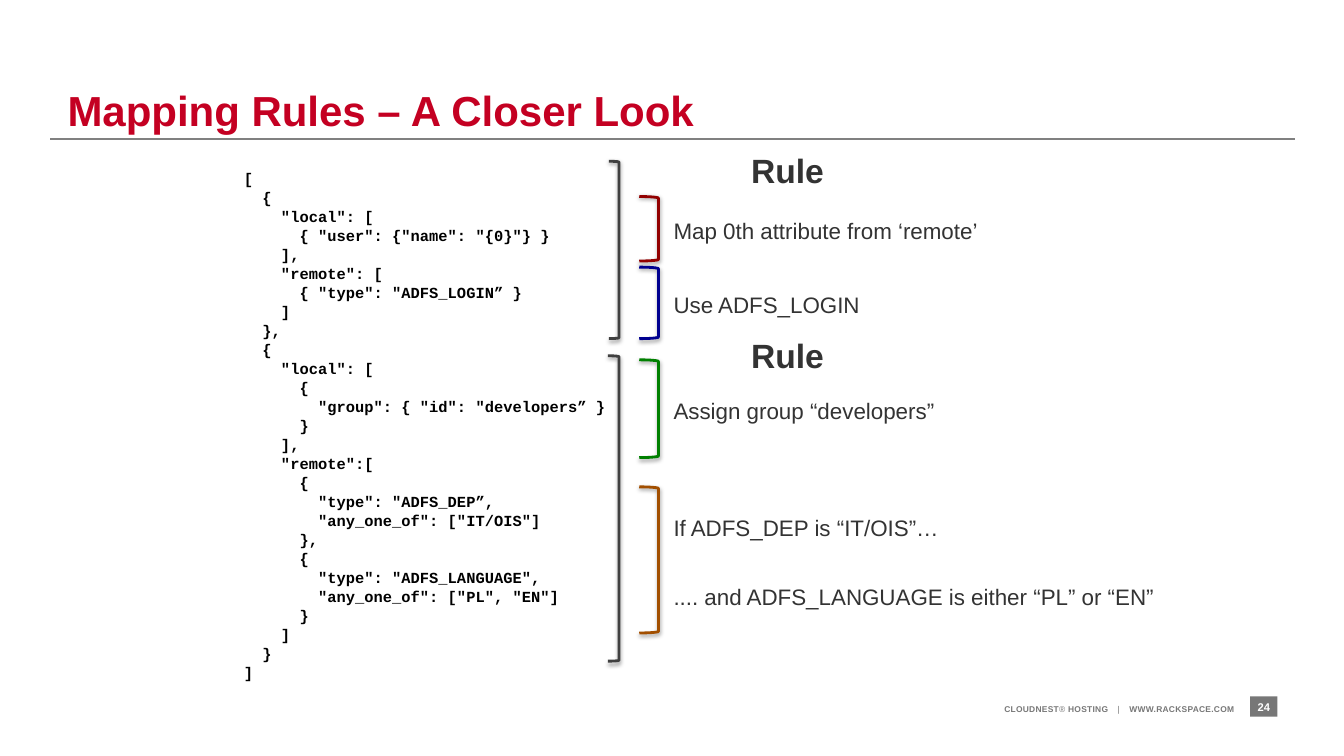
import pptx
import pptx.util
import pptx.dml.color
import pptx.enum.shapes
import pptx.enum.text
import pptx.oxml
import pptx.oxml.ns

Inches = pptx.util.Inches
Pt = pptx.util.Pt
RGBColor = pptx.dml.color.RGBColor
Anchor = pptx.enum.text.MSO_ANCHOR
Align = pptx.enum.text.PP_ALIGN
Preset = pptx.enum.shapes.MSO_SHAPE

CRIMSON = RGBColor(0xC4, 0x00, 0x22)
INK = RGBColor(0x33, 0x33, 0x33)
BLACK = RGBColor(0x00, 0x00, 0x00)
WHITE = RGBColor(0xFF, 0xFF, 0xFF)
FOOTER_GRAY = RGBColor(0x77, 0x77, 0x77)
RULE_GRAY = RGBColor(0x80, 0x80, 0x80)
CHARCOAL = RGBColor(0x40, 0x40, 0x40)
RED = RGBColor(0x92, 0x00, 0x00)
BLUE = RGBColor(0x00, 0x00, 0x90)
GREEN = RGBColor(0x00, 0x80, 0x00)
BROWN = RGBColor(0xA2, 0x4F, 0x00)

TITLE = "Mapping Rules – A Closer Look"
PAGE_NUMBER = "24"
FOOTER = [
    ("CLOUDNEST", True, 0.2),
    ("®", False, 0.2),
    (" HOSTING", True, 0.2),
    (" ", False, 5),
    ("|", False, 0.2),
    (" ", False, 5),
    ("WWW.RACKSPACE.COM", True, 0.2),
]
CODE = """[
  {
    "local": [
      { "user": {"name": "{0}"} }
    ],
    "remote": [
      { "type": "ADFS_LOGIN” }
    ]
  },
  {
    "local": [
      {
        "group": { "id": "developers” }
      }
    ],
    "remote":[
      {
        "type": "ADFS_DEP”,
        "any_one_of": ["IT/OIS"]
      },
      {
        "type": "ADFS_LANGUAGE",
        "any_one_of": ["PL", "EN"]
      }
    ]
  }
]""".split("\n")

RULE_TOPS = [1.49, 3.32]
NOTES = [
    (2.15, 0.27, ["Map 0th attribute from ‘remote’"]),
    (2.89, 0.27, ["Use ADFS_LOGIN"]),
    (3.94, 0.27, ["Assign group “developers”"]),
    (5.1, 0.96, ["If ADFS_DEP is “IT/OIS”…",
                 ".... and ADFS_LANGUAGE is either “PL” or “EN”"]),
]
BRACKETS = [
    (6.04, 1.6, 0.1, 1.76, CHARCOAL),
    (6.03, 3.53, 0.11, 3.03, CHARCOAL),
    (6.34, 1.95, 0.19, 0.64, RED),
    (6.34, 2.65, 0.19, 0.71, BLUE),
    (6.34, 3.57, 0.19, 0.97, GREEN),
    (6.34, 4.83, 0.19, 1.45, BROWN),
]
SHADOW = (
    '<a:effectLst xmlns:a="http://schemas.openxmlformats.org/drawingml/2006/main">'
    '<a:outerShdw blurRad="39370" dist="20320" dir="5400000" rotWithShape="0">'
    '<a:srgbClr val="000000"><a:alpha val="38000"/></a:srgbClr>'
    '</a:outerShdw></a:effectLst>'
)


def style(paragraph, size, color, bold=False, font="Arial"):
    paragraph.font.size = Pt(size)
    paragraph.font.name = font
    paragraph.font.bold = bold
    paragraph.font.color.rgb = color


def prepare(frame, anchor, inset=0):
    frame.word_wrap = True
    frame.vertical_anchor = anchor
    frame.margin_left = frame.margin_right = Inches(inset)
    frame.margin_top = frame.margin_bottom = Inches(inset)


def add_text(slide, box, lines, size, color, bold=False, font="Arial",
             anchor=Anchor.TOP, inset=0, line_spacing=None, before=0, after=0):
    frame = slide.shapes.add_textbox(*map(Inches, box)).text_frame
    prepare(frame, anchor, inset)
    for index, line in enumerate(lines):
        paragraph = frame.add_paragraph() if index else frame.paragraphs[0]
        paragraph.add_run().text = line
        style(paragraph, size, color, bold, font)
        paragraph.line_spacing = line_spacing
        paragraph.space_before = Pt(before if index else 0)
        paragraph.space_after = Pt(after)
    return frame


def add_bracket(slide, left, top, width, height, color):
    bracket = slide.shapes.add_shape(
        Preset.RIGHT_BRACKET, *map(Inches, (left, top, width, height)))
    bracket.fill.background()
    bracket.line.color.rgb = color
    bracket.line.width = Pt(2)
    bracket._element.spPr.append(pptx.oxml.parse_xml(SHADOW))


def add_title_line(slide):
    line = slide.shapes.add_connector(
        pptx.enum.shapes.MSO_CONNECTOR.STRAIGHT,
        Inches(0.5), Inches(1.38), Inches(12.84), Inches(1.38))
    line.line.color.rgb = RULE_GRAY
    line.line.width = Pt(1.5)
    properties = line._element.spPr
    properties.append(properties.makeelement(pptx.oxml.ns.qn("a:effectLst"), {}))


def add_footer(slide):
    frame = add_text(slide, (2.93, 7, 9.31, 0.08), [], 6, FOOTER_GRAY,
                     anchor=Anchor.MIDDLE)
    paragraph = frame.paragraphs[0]
    paragraph.alignment = Align.RIGHT
    paragraph.line_spacing = 0.9
    style(paragraph, 6, FOOTER_GRAY)
    for text, bold, spacing in FOOTER:
        run = paragraph.add_run()
        run.text = text
        run.font.bold = bold
        run._r.get_or_add_rPr().set("spc", str(round(spacing * 100)))

    badge = slide.shapes.add_shape(
        Preset.RECTANGLE, *map(Inches, (12.4, 6.91, 0.27, 0.2)))
    badge.shadow.inherit = False
    badge.fill.solid()
    badge.fill.fore_color.rgb = FOOTER_GRAY
    badge.line.fill.background()
    prepare(badge.text_frame, Anchor.MIDDLE)
    paragraph = badge.text_frame.paragraphs[0]
    paragraph.add_run().text = PAGE_NUMBER
    paragraph.alignment = Align.CENTER
    style(paragraph, 8, WHITE, True)


def main():
    presentation = pptx.Presentation()
    presentation.slide_width = Inches(13.33)
    presentation.slide_height = Inches(7.5)
    slide = presentation.slides.add_slide(presentation.slide_layouts[6])

    add_title_line(slide)
    add_footer(slide)
    add_text(slide, (0.67, 0.48, 12, 0.87), [TITLE], 30, CRIMSON, True,
             anchor=Anchor.BOTTOM, line_spacing=0.9)
    add_text(slide, (2.29, 1.6, 5.74, 5.28), CODE, 11, BLACK, True,
             "Courier New", Anchor.MIDDLE, 0.13, 0.8, 1, 2)
    for bracket in BRACKETS:
        add_bracket(slide, *bracket)
    for top in RULE_TOPS:
        add_text(slide, (7.45, top, 0.82, 0.4), ["Rule"], 24, INK, True)
    for top, height, lines in NOTES:
        add_text(slide, (6.68, top, 5.05, height), lines, 16, INK,
                 after=30 if len(lines) > 1 else 0)

    presentation.save("out.pptx")


if __name__ == "__main__":
    main()
